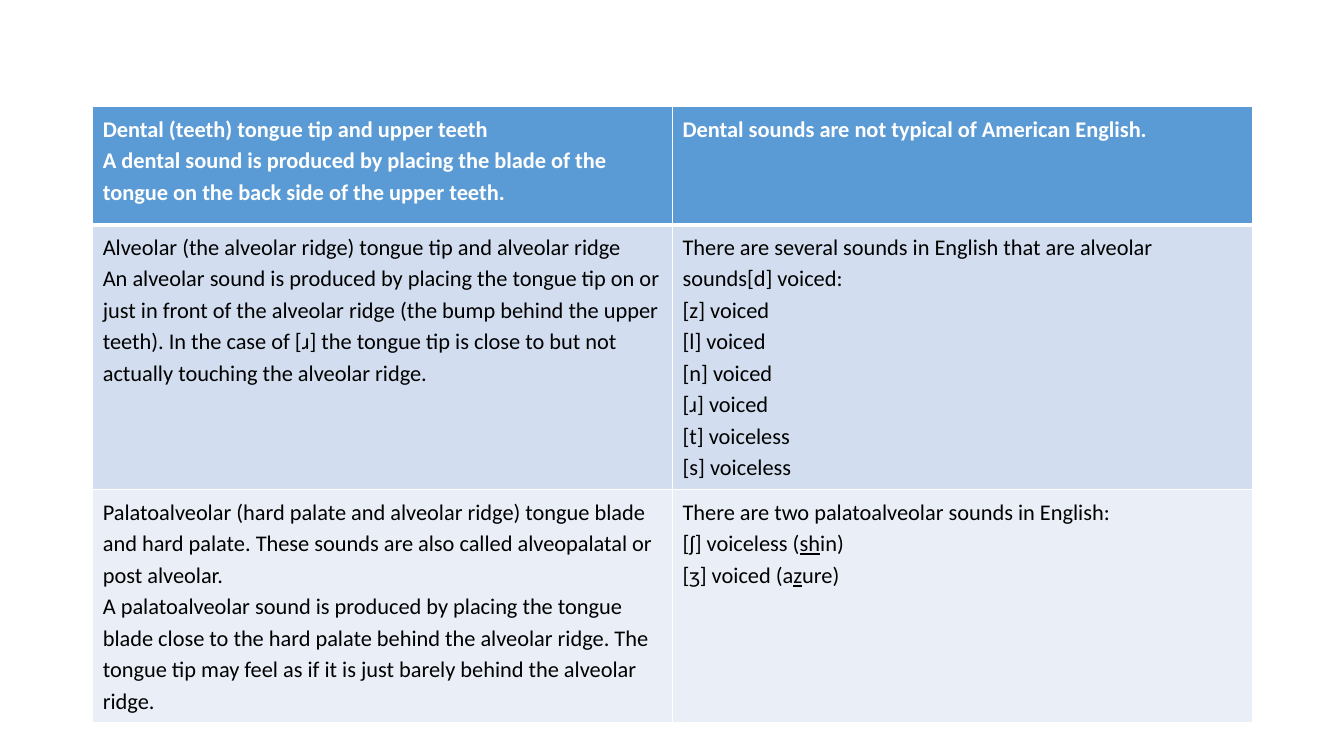
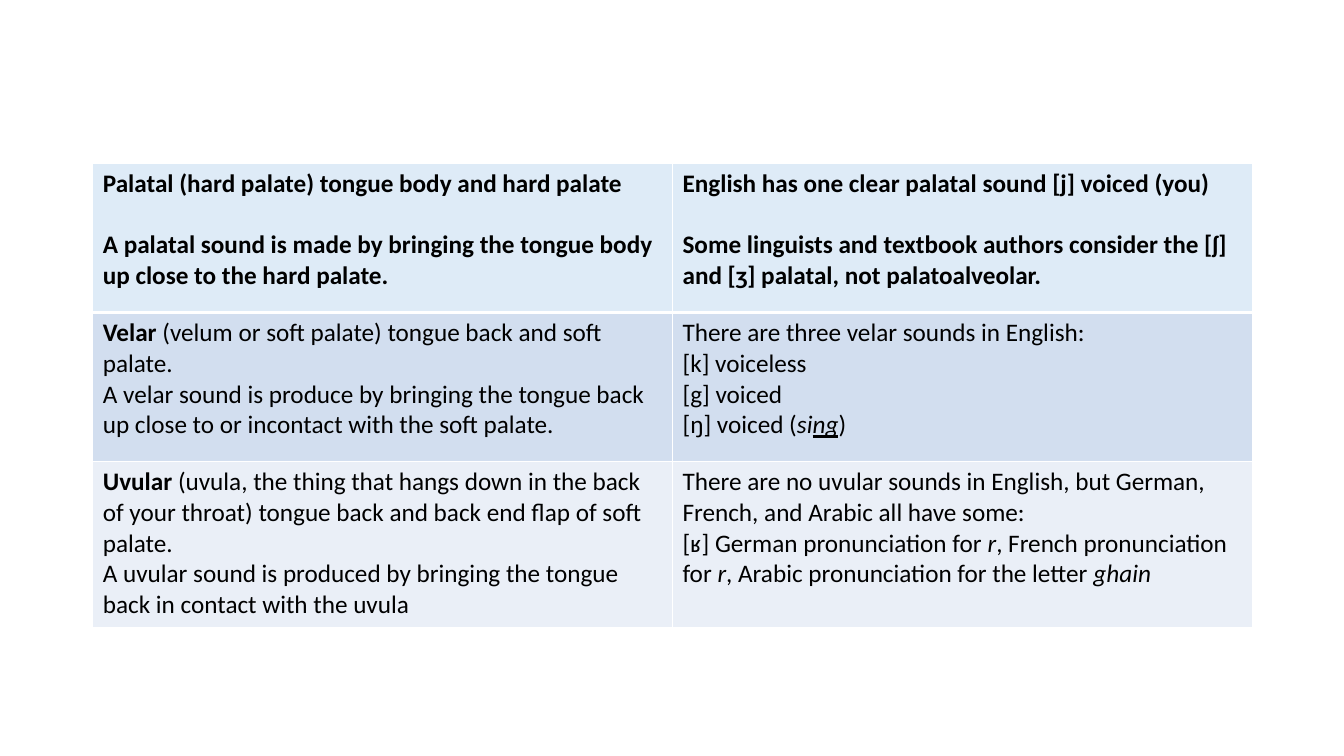
import dataclasses
import typing

import pptx
import pptx.dml.color
import pptx.oxml
import pptx.oxml.ns
import pptx.util

RGB = pptx.dml.color.RGBColor
WHITE = RGB(0xFF, 0xFF, 0xFF)
BLACK = RGB(0x00, 0x00, 0x00)
BLUE = RGB(0x5B, 0x9B, 0xD5)
PALE = RGB(0xDE, 0xEB, 0xF7)
BAND = RGB(0xD2, 0xDE, 0xEF)
LIGHT = RGB(0xEA, 0xEF, 0xF7)

SCALE = 9144
WIDE, HIGH = 1333, 750
LEFT, COL = 92, 575
FONT = "Calibri"
THIN, THICK = 1, 3

BOLD = {"bold": True}
ITAL = {"italic": True}
LINE = {"underline": True}


@dataclasses.dataclass(frozen=True)
class Run:
    text: str
    style: dict[str, bool] = dataclasses.field(default_factory=dict)


@dataclasses.dataclass(frozen=True)
class Para:
    runs: tuple[Run, ...]
    gap: int = 0


@dataclasses.dataclass(frozen=True)
class Row:
    high: int
    fill: RGB
    cells: tuple[list[Para], list[Para]]


@dataclasses.dataclass(frozen=True)
class Grid:
    top: int
    size: int
    space: float
    ink: RGB
    rows: tuple[Row, ...]


def px(count: int) -> pptx.util.Emu:
    return pptx.util.Emu(count * SCALE)


def plain(*lines: str, gap: int = 0) -> list[Para]:
    return [Para((Run(line),), gap if spot else 0) for spot, line in enumerate(lines)]


def rich(*parts: Run) -> list[Para]:
    return [Para(parts)]


GRIDS = (
    Grid(106, 16, 1.15, WHITE, (
        Row(117, BLUE, (
            plain(
                "Dental (teeth) tongue tip and upper teeth",
                "A dental sound is produced by placing the blade of the tongue on the back "
                "side of the upper teeth.",
            ),
            plain("Dental sounds are not typical of American English."),
        )),
        Row(263, BAND, (
            plain(
                "Alveolar (the alveolar ridge) tongue tip and alveolar ridge",
                "An alveolar sound is produced by placing the tongue tip on or just in front "
                "of the alveolar ridge (the bump behind the upper teeth). In the case of [ɹ] "
                "the tongue tip is close to but not actually touching the alveolar ridge.",
            ),
            plain(
                "There are several sounds in English that are alveolar sounds[d] voiced:",
                "[z] voiced",
                "[l] voiced",
                "[n] voiced",
                "[ɹ] voiced",
                "[t] voiceless",
                "[s] voiceless",
            ),
        )),
        Row(231, LIGHT, (
            plain(
                "Palatoalveolar (hard palate and alveolar ridge) tongue blade and hard palate. "
                "These sounds are also called alveopalatal or post alveolar.",
                "A palatoalveolar sound is produced by placing the tongue blade close to the "
                "hard palate behind the alveolar ridge. The tongue tip may feel as if it is "
                "just barely behind the alveolar ridge.",
            ),
            plain("There are two palatoalveolar sounds in English:")
            + rich(Run("[ʃ] voiceless ("), Run("sh", LINE), Run("in)"))
            + rich(Run("[ʒ] voiced (a"), Run("z", LINE), Run("ure)")),
        )),
    )),
    Grid(162, 18, 1.0, BLACK, (
        Row(148, PALE, (
            plain(
                "Palatal (hard palate) tongue body and hard palate",
                "A palatal sound is made by bringing the tongue body up close to the hard "
                "palate.",
                gap=22,
            ),
            plain(
                "English has one clear palatal sound [j] voiced (you)",
                "Some linguists and textbook authors consider the [ʃ] and [ʒ] palatal, not "
                "palatoalveolar.",
                gap=22,
            ),
        )),
        Row(148, BAND, (
            rich(
                Run("Velar", BOLD),
                Run(" (velum or soft palate) tongue back and soft palate."),
            )
            + plain(
                "A velar sound is produce by bringing the tongue back up close to or "
                "incontact with the soft palate."
            ),
            plain(
                "There are three velar sounds in English:",
                "[k] voiceless",
                "[g] voiced",
            )
            + rich(Run("[ŋ] voiced ("), Run("si", ITAL), Run("ng", ITAL | LINE), Run(")")),
        )),
        Row(165, LIGHT, (
            rich(
                Run("Uvular", BOLD),
                Run(" (uvula, the thing that hangs down in the back of your throat) tongue "
                    "back and back end flap of soft palate."),
            )
            + plain(
                "A uvular sound is produced by bringing the tongue back in contact with the "
                "uvula"
            ),
            plain(
                "There are no uvular sounds in English, but German, French, and Arabic all "
                "have some:"
            )
            + rich(
                Run("[ʁ] German pronunciation for "),
                Run("r", ITAL),
                Run(", French pronunciation for "),
                Run("r", ITAL),
                Run(", Arabic pronunciation for the letter "),
                Run("ghain", ITAL),
            ),
        )),
    )),
)


def apply(target: typing.Any, values: dict[str, typing.Any]) -> None:
    for name, value in values.items():
        setattr(target, name, value)


def edge(cell: typing.Any, rank: int) -> None:
    widths = {
        "lnL": THIN,
        "lnR": THIN,
        "lnT": THICK if rank == 1 else THIN,
        "lnB": THICK if rank == 0 else THIN,
    }
    props = cell._tc.get_or_add_tcPr()
    for spot, (tag, width) in enumerate(widths.items()):
        props.insert(spot, pptx.oxml.parse_xml(
            f'<a:{tag} {pptx.oxml.ns.nsdecls("a")} w="{pptx.util.Pt(width)}">'
            f'<a:solidFill><a:srgbClr val="{WHITE}"/></a:solidFill></a:{tag}>'
        ))


def write(cell: typing.Any, paras: list[Para], grid: Grid, head: bool) -> None:
    base = {"name": FONT, "size": pptx.util.Pt(grid.size), "bold": head}
    frame = cell.text_frame
    for spot, para in enumerate(paras):
        block = frame.add_paragraph() if spot else frame.paragraphs[0]
        apply(block, {
            "line_spacing": grid.space,
            "space_before": pptx.util.Pt(para.gap),
        })
        for part in para.runs:
            run = block.add_run()
            run.text = part.text
            apply(run.font, base | part.style)
            run.font.color.rgb = grid.ink if head else BLACK


def draw(slide: typing.Any, grid: Grid) -> None:
    total = sum(row.high for row in grid.rows)
    table = slide.shapes.add_table(
        len(grid.rows), 2, px(LEFT), px(grid.top), px(2 * COL), px(total)
    ).table
    apply(table, {"first_row": False, "horz_banding": False})
    for column in table.columns:
        column.width = px(COL)
    for rank, row in enumerate(grid.rows):
        table.rows[rank].height = px(row.high)
        for side, paras in enumerate(row.cells):
            cell = table.cell(rank, side)
            cell.fill.solid()
            cell.fill.fore_color.rgb = row.fill
            edge(cell, rank)
            write(cell, paras, grid, rank == 0)


def main() -> None:
    deck = pptx.Presentation()
    apply(deck, {"slide_width": px(WIDE), "slide_height": px(HIGH)})
    for grid in GRIDS:
        draw(deck.slides.add_slide(deck.slide_layouts[6]), grid)
    deck.save("out.pptx")


if __name__ == "__main__":
    main()
